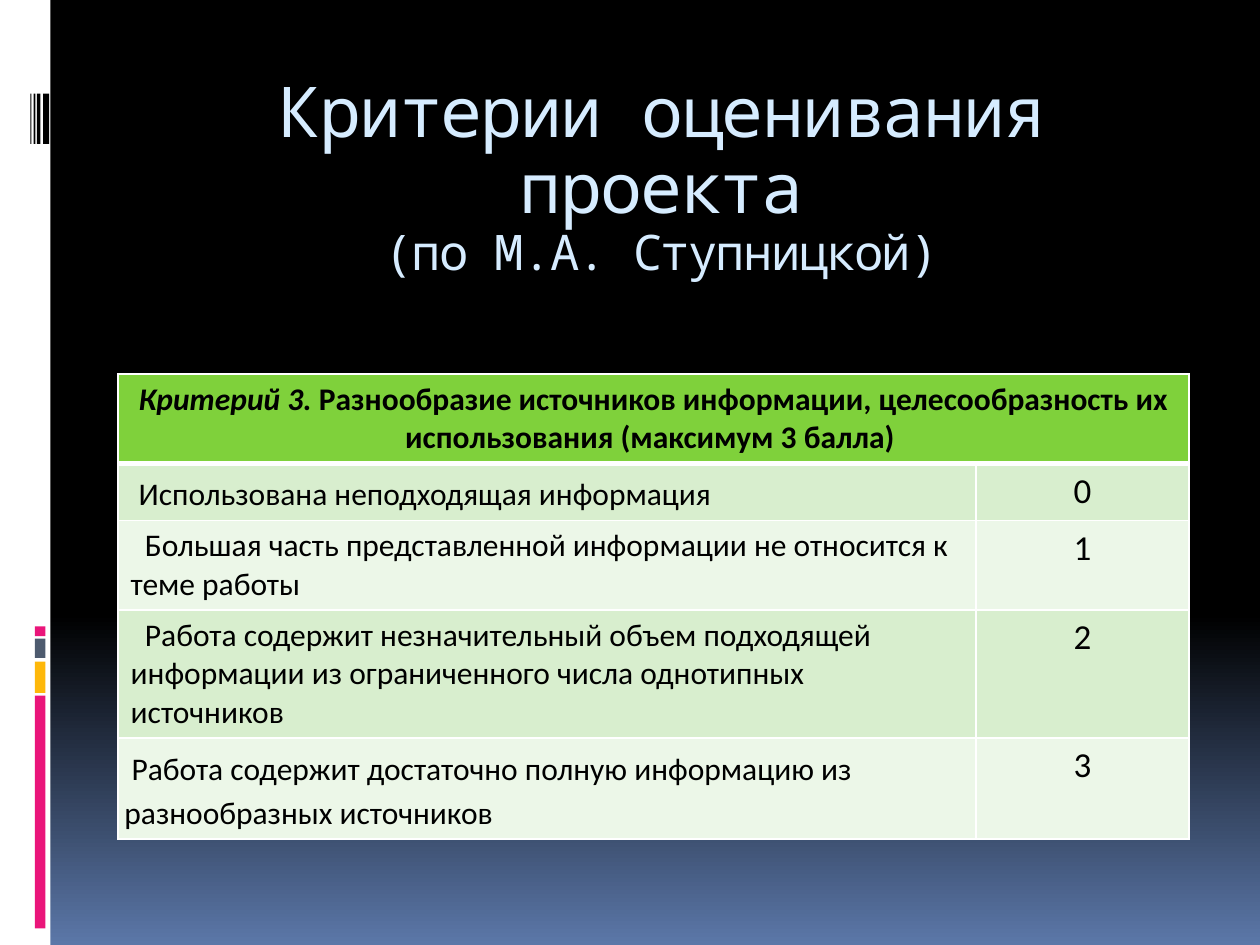
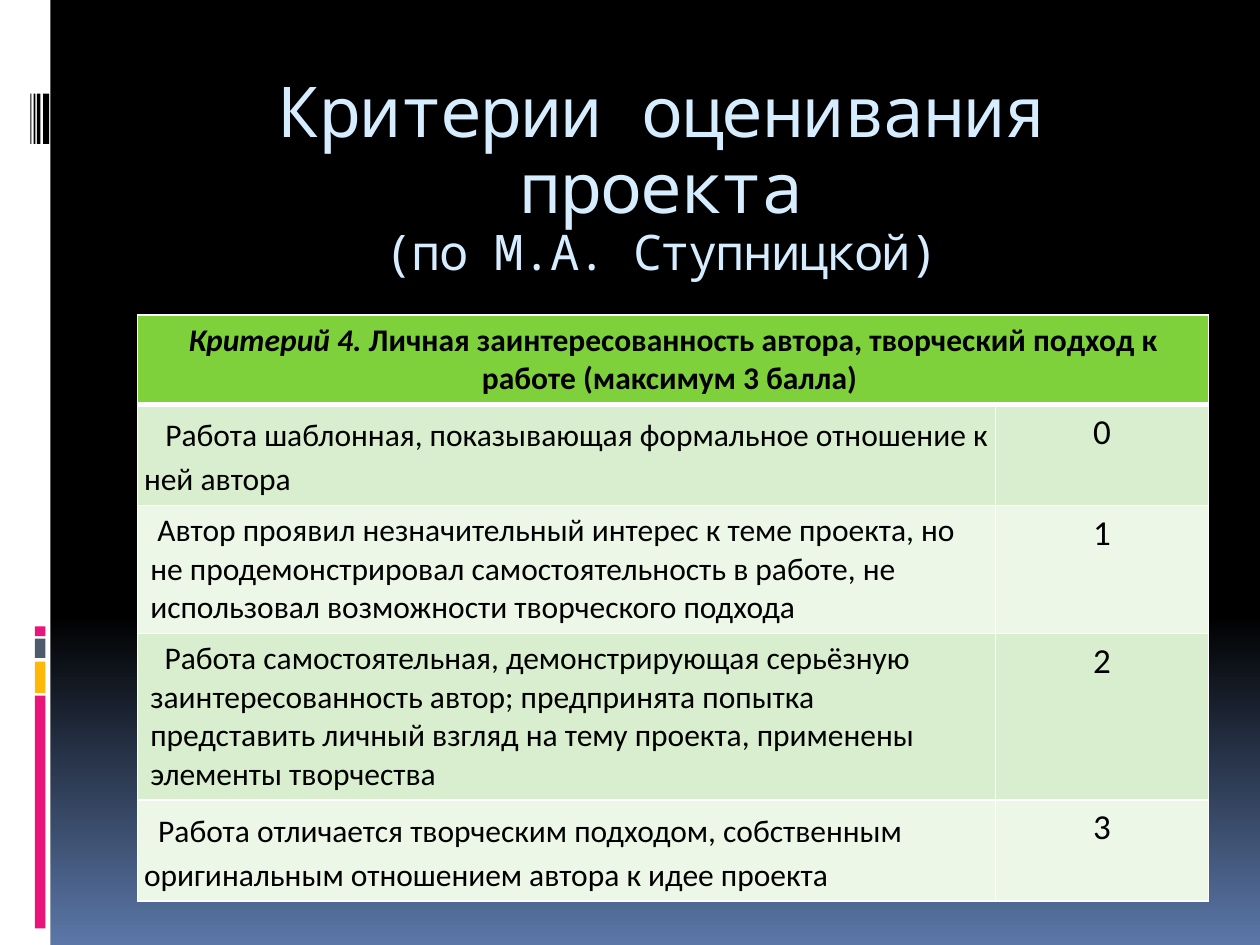
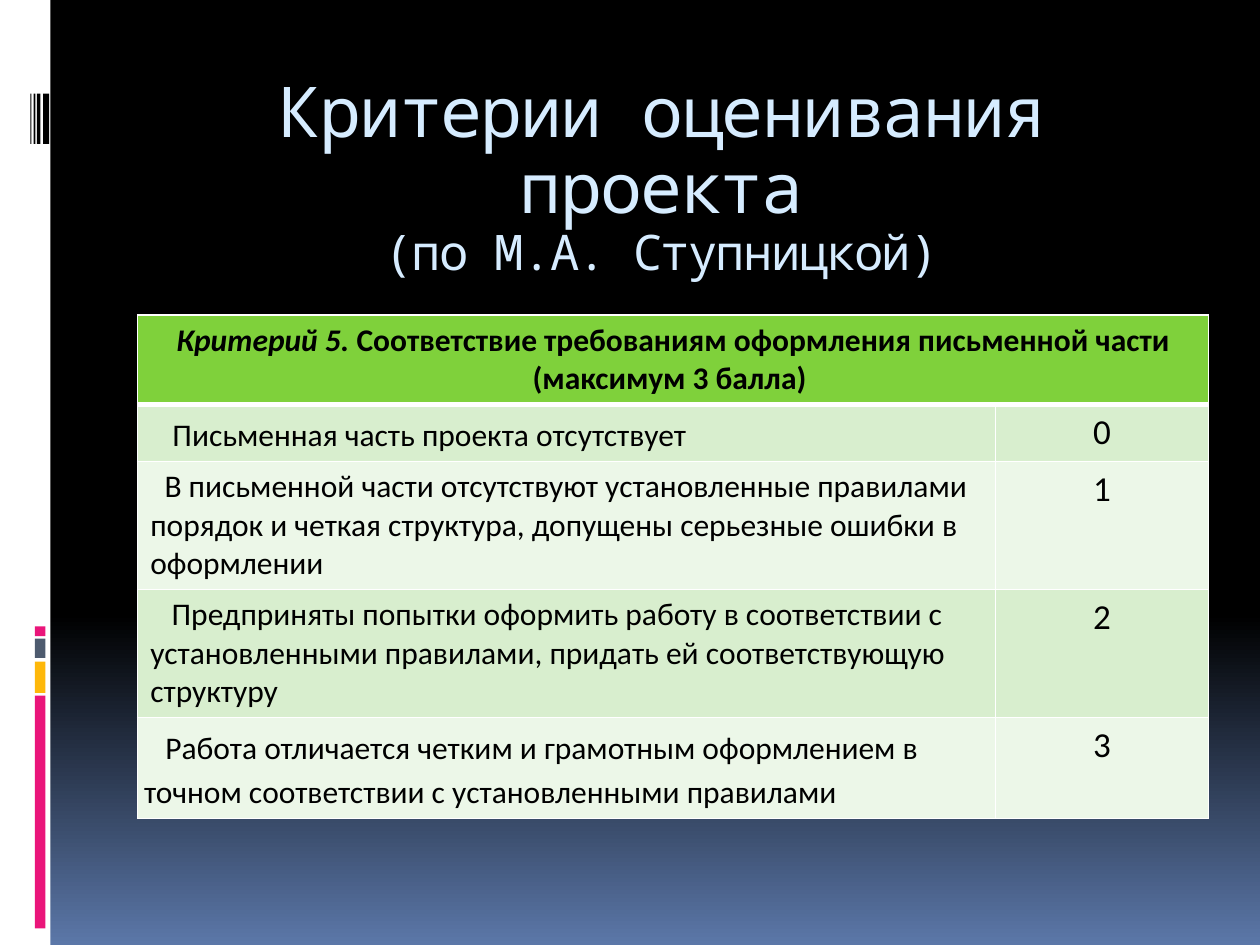
from copy import deepcopy

from pptx import Presentation
from pptx.dml.color import RGBColor
from pptx.enum.shapes import MSO_SHAPE
from pptx.enum.text import MSO_ANCHOR, PP_ALIGN
from pptx.oxml import parse_xml
from pptx.oxml.ns import nsdecls, qn
from pptx.util import Pt

# Shared look
WHITE, BLACK, SKY, NIGHT_BLUE = "FFFFFF", "000000", "D6ECFF", "5B77A8"
PINK, AMBER, SLATE = "EA157A", "FEB80A", "4E5B6F"
HEADER_GREEN, BANDS = "7FD13B", ("D8EECE", "ECF7E8")
TITLE_FONT, BODY_FONT = "Noto Sans Mono", "Calibri"
SPACE = 4.07  # width of one space at 18 pt, the unit of first-line indents
COLUMNS, ROW_HEIGHT = (490.2, 121.8), 29.2

# Side decoration: left, top, width, height, colour
SIDE_BARS = [
    (0, 0, 28.8, 540, WHITE),
    (20, 397.5, 6, 133, PINK),
    (20, 378, 6, 18, AMBER),
    (20, 365, 6, 11, SLATE),
    (20, 358, 6, 5.5, PINK),
] + [(left, 53.5, width, 28.8, BLACK)
     for left, width in ((24.6, 3.5), (21.1, 2), (19.3, 0.9), (17.3, 0.7))]

# Each criterion: table left and top, number, heading, (indent in spaces, text) by score
CRITERIA = [
    (67.5, 213.8, 3,
     "Разнообразие источников информации, целесообразность их использования (максимум 3 балла) ",
     [(2, "Использована неподходящая информация"),
      (2, "Большая часть представленной информации не относится к теме работы"),
      (2, "Работа содержит незначительный объем подходящей информации из ограниченного "
          "числа однотипных источников"),
      (1, "Работа содержит достаточно полную информацию из разнообразных источников")]),
    (78.7, 180, 4,
     "Личная заинтересованность автора, творческий подход к работе (максимум 3 балла) ",
     [(3, "Работа шаблонная, показывающая формальное отношение к ней автора"),
      (1, "Автор проявил незначительный интерес к теме проекта, но не продемонстрировал "
          "самостоятельность в работе, не использовал возможности творческого подхода"),
      (2, "Работа самостоятельная, демонстрирующая серьёзную заинтересованность автор; "
          "предпринята попытка представить личный взгляд на тему проекта, применены "
          "элементы творчества"),
      (2, "Работа отличается творческим подходом, собственным оригинальным отношением "
          "автора к идее проекта")]),
    (78.7, 180, 5,
     "Соответствие требованиям оформления письменной части (максимум 3 балла) ",
     [(4, "Письменная часть проекта отсутствует"),
      (2, "В письменной части отсутствуют установленные правилами порядок и четкая "
          "структура, допущены серьезные ошибки в оформлении"),
      (3, "Предприняты попытки оформить работу в соответствии с установленными правилами, "
          "придать ей соответствующую структуру"),
      (3, "Работа отличается четким и грамотным оформлением в точном соответствии с "
          "установленными правилами")]),
]


def color(value):
    return RGBColor.from_string(value)


def add_span(para, text, size=18, font=BODY_FONT, fill=BLACK, bold=False, italic=False,
             tracking=0):
    span = para.add_run()
    span.text = text
    span.font.size, span.font.name = Pt(size), font
    span.font.bold, span.font.italic = bold, italic
    span.font.color.rgb = color(fill)
    if tracking:
        span.font._element.set("spc", str(tracking * 100))


def set_background(master):
    fill = master.background.fill
    fill.gradient()
    fill.gradient_angle = 270
    stops = master.element.find(".//" + qn("a:gsLst"))
    stops.insert(0, deepcopy(stops[0]))
    for stop, (position, value) in zip(
            fill.gradient_stops, ((0, BLACK), (0.65, BLACK), (1, NIGHT_BLUE))):
        stop.position = position
        stop.color.rgb = color(value)


def add_side_bars(page):
    for left, top, width, height, value in SIDE_BARS:
        bar = page.shapes.add_shape(
            MSO_SHAPE.RECTANGLE, Pt(left), Pt(top), Pt(width), Pt(height))
        bar.shadow.inherit = False
        bar.fill.solid()
        bar.fill.fore_color.rgb = color(value)
        bar.line.fill.background()


def set_title(page):
    title = page.shapes.title
    title.left, title.top, title.width, title.height = Pt(72), Pt(40.5), Pt(612), Pt(72)
    frame = title.text_frame
    frame.word_wrap = True
    frame.vertical_anchor = MSO_ANCHOR.TOP
    para = frame.paragraphs[0]
    para.alignment = PP_ALIGN.CENTER
    para.line_spacing = 0.9
    style = {"font": TITLE_FONT, "fill": SKY, "tracking": -1}
    add_span(para, "Критерии оценивания проекта", size=40, **style)
    para.add_line_break()
    add_span(para, "(по М.А. Ступницкой)", size=28, **style)


def format_cell(cell, fill, top=1, bottom=1):
    cell.fill.solid()
    cell.fill.fore_color.rgb = color(fill)
    properties = cell._tc.get_or_add_tcPr()
    for index, (side, width) in enumerate(zip("LRTB", (1, 1, top, bottom))):
        properties.insert(index, parse_xml(
            f'<a:ln{side} {nsdecls("a")} w="{Pt(width)}"><a:solidFill>'
            f'<a:srgbClr val="{WHITE}"/></a:solidFill></a:ln{side}>'))


def add_criterion_table(page, left, top, number, heading, levels):
    rows = len(levels) + 1
    table = page.shapes.add_table(
        rows, 2, Pt(left), Pt(top), Pt(sum(COLUMNS)), Pt(rows * ROW_HEIGHT)).table
    table.first_row = table.horz_banding = False
    for column, width in zip(table.columns, COLUMNS):
        column.width = Pt(width)
    for row in table.rows:
        row.height = Pt(ROW_HEIGHT)

    # Heading across both columns
    header = table.cell(0, 0)
    header.merge(table.cell(0, 1))
    for column in range(2):
        format_cell(table.cell(0, column), HEADER_GREEN, bottom=3)
    para = header.text_frame.paragraphs[0]
    para.alignment = PP_ALIGN.CENTER
    add_span(para, f"Критерий {number}.", bold=True, italic=True)
    add_span(para, " " + heading, bold=True)

    # One row per score; the first and last are set more loosely
    for score, (spaces, text) in enumerate(levels):
        level, points = table.cell(score + 1, 0), table.cell(score + 1, 1)
        for cell in (level, points):
            format_cell(cell, BANDS[score % 2], top=1 if score else 3)
        para = level.text_frame.paragraphs[0]
        para._p.get_or_add_pPr().set("indent", str(Pt(spaces * SPACE)))
        add_span(para, text)
        if score in (0, len(levels) - 1):
            para.line_spacing = 1.15
            para.space_after = Pt(10)
            level.margin_left = level.margin_right = Pt(3.6)
            level.margin_top = level.margin_bottom = Pt(3.6)
        para = points.text_frame.paragraphs[0]
        para.alignment = PP_ALIGN.CENTER
        add_span(para, str(score), size=20)


def main():
    deck = Presentation()
    deck.slide_width, deck.slide_height = Pt(720), Pt(540)
    set_background(deck.slide_master)
    title_only = deck.slide_layouts[5]
    for criterion in CRITERIA:
        page = deck.slides.add_slide(title_only)
        add_side_bars(page)
        set_title(page)
        add_criterion_table(page, *criterion)
    deck.save("out.pptx")


if __name__ == "__main__":
    main()
